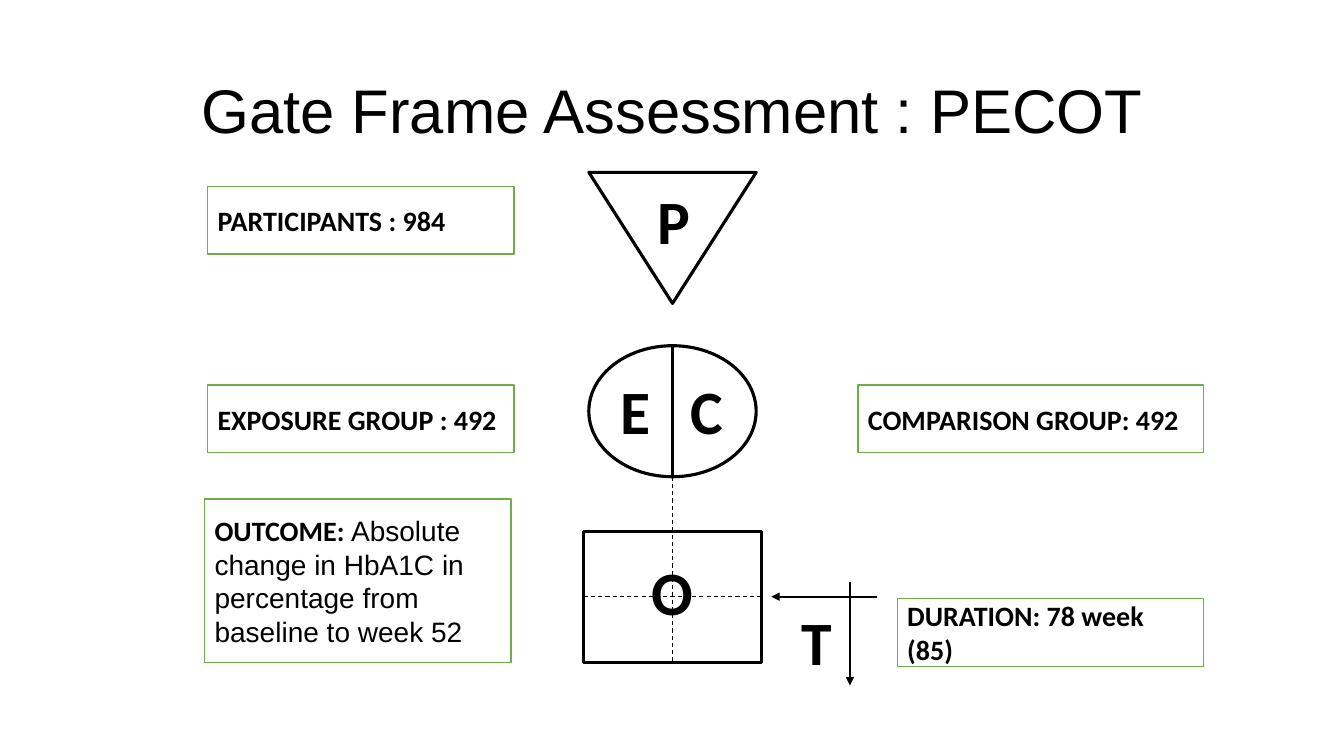
from lxml import etree
from pptx import Presentation
from pptx.dml.color import RGBColor
from pptx.enum.dml import MSO_LINE
from pptx.enum.shapes import MSO_CONNECTOR, MSO_SHAPE
from pptx.enum.text import MSO_ANCHOR, PP_ALIGN
from pptx.oxml.ns import qn
from pptx.util import Pt

PX = 9144
STRAIGHT = MSO_CONNECTOR.STRAIGHT
RECT, OVAL, TRIANGLE = MSO_SHAPE.RECTANGLE, MSO_SHAPE.OVAL, MSO_SHAPE.ISOSCELES_TRIANGLE
DASH = MSO_LINE.DASH
MIDDLE = MSO_ANCHOR.MIDDLE
LEFT, CENTER = PP_ALIGN.LEFT, PP_ALIGN.CENTER
BLACK, WHITE, GREEN = "000000", "FFFFFF", "70AD47"


def px(*lengths):
    """Turn pixel lengths into EMU."""
    return [n * PX for n in lengths]


def rgb(value):
    """Turn a hex string into a colour."""
    return RGBColor.from_string(value)


def style(r, size, font="Calibri", bold=True):
    """Format a run in black."""
    r.font.size, r.font.name, r.font.bold = Pt(size), font, bold
    r.font.color.rgb = rgb(BLACK)


def outline(shapes, kind, box, color=BLACK, width=2.25):
    """Add a white preset shape with a coloured outline."""
    sp = shapes.add_shape(kind, *px(*box))
    sp.shadow.inherit = False
    sp.fill.solid()
    sp.fill.fore_color.rgb = rgb(WHITE)
    sp.line.color.rgb = rgb(color)
    sp.line.width = Pt(width)
    return sp


def line(shapes, x1, y1, x2, y2, width, dash=None, arrow=False):
    """Add a straight black line, dashed or with an arrowhead on request."""
    cx = shapes.add_connector(STRAIGHT, *px(x1, y1, x2, y2))
    cx.line.color.rgb = rgb(BLACK)
    cx.line.width = Pt(width)
    if dash:
        cx.line.dash_style = dash
    if arrow:
        etree.SubElement(cx.line._get_or_add_ln(), qn("a:tailEnd"), type="triangle")
    etree.SubElement(cx._element.spPr, qn("a:effectLst"))


def letter(shapes, text, x, y, w):
    """Add one large frame letter."""
    tf = shapes.add_textbox(*px(x, y, w, 84)).text_frame
    tf.word_wrap = True
    p = tf.paragraphs[0]
    p.text = text
    style(p.runs[0], 44)


def title(s, box, text):
    """Place and format the slide title."""
    sp = s.shapes.title
    sp.left, sp.top, sp.width, sp.height = px(*box)
    tf = sp.text_frame
    tf.text = text
    tf.vertical_anchor = MIDDLE
    p = tf.paragraphs[0]
    p.alignment, p.line_spacing = CENTER, 0.9
    style(p.runs[0], 44, "Arial", False)


def population(s, x, y, w, h):
    """Draw the participants triangle."""
    shapes = s.shapes.add_group_shape().shapes
    outline(shapes, TRIANGLE, (x, y, w, h)).rotation = 180
    letter(shapes, "P", x + 58, y + 6, 76)


def groups(s, x, y, w, h):
    """Draw the circle split into exposure and comparison."""
    shapes = s.shapes.add_group_shape().shapes
    mid = x + w // 2
    outline(shapes, OVAL, (x, y, w, h))
    line(shapes, mid, y, mid, y + h, 2.25)
    letter(shapes, "E", x + 22, y + 22, 48)
    letter(shapes, "C", x + 91, y + 22, 48)


def outcome(s, x, y, w, h, stem):
    """Draw the outcome square, its dashed cross and the stem above it."""
    shapes = s.shapes.add_group_shape().shapes
    outline(shapes, RECT, (x, y, w, h))
    letter(shapes, "O", x + 57, y + 18, 54)
    mid_x, mid_y = x + w // 2, y + h // 2
    line(s.shapes, mid_x, y - stem, mid_x, y + h, 0.75, DASH)
    line(s.shapes, x, mid_y, x + w, mid_y, 0.75, DASH)


def time(s, x, y, w, h):
    """Draw the crossed time arrows."""
    shapes = s.shapes.add_group_shape().shapes
    line(shapes, x + w, y + 15, x, y + 15, 1.5, arrow=True)
    line(shapes, x + 78, y, x + 78, y + h, 1.5, arrow=True)
    letter(shapes, "T", x + 20, y + 17, 66)


def label(s, box, text, detail=""):
    """Add a green-framed label with a bold lead and a plain detail."""
    tf = outline(s.shapes, RECT, box, GREEN, 1).text_frame
    tf.word_wrap = True
    tf.vertical_anchor = MIDDLE
    p = tf.paragraphs[0]
    p.text = text
    p.alignment = LEFT
    style(p.runs[0], 20)
    if detail:
        r = p.add_run()
        r.text = detail
        style(r, 20, "Arial", False)


def main():
    """Build and save the slide."""
    prs = Presentation()
    prs.slide_width, prs.slide_height = px(1333, 750)
    s = prs.slides.add_slide(prs.slide_layouts[5])
    title(s, (92, 40, 1150, 145), "Gate Frame Assessment : PECOT")
    population(s, 584, 171, 166, 130)
    groups(s, 584, 343, 166, 130)
    outcome(s, 579, 527, 176, 130, 54)
    time(s, 765, 577, 105, 103)
    label(s, (206, 185, 304, 67), "PARTICIPANTS : 984")
    label(s, (206, 382, 304, 67), "EXPOSURE GROUP : 492")
    label(s, (851, 382, 343, 67), "COMPARISON GROUP: 492")
    label(s, (203, 495, 304, 162), "OUTCOME: ",
          "Absolute change in HbA1C in percentage from baseline to week 52")
    label(s, (890, 594, 304, 67), "DURATION: 78 week (85)")
    prs.save("out.pptx")


if __name__ == "__main__":
    main()
